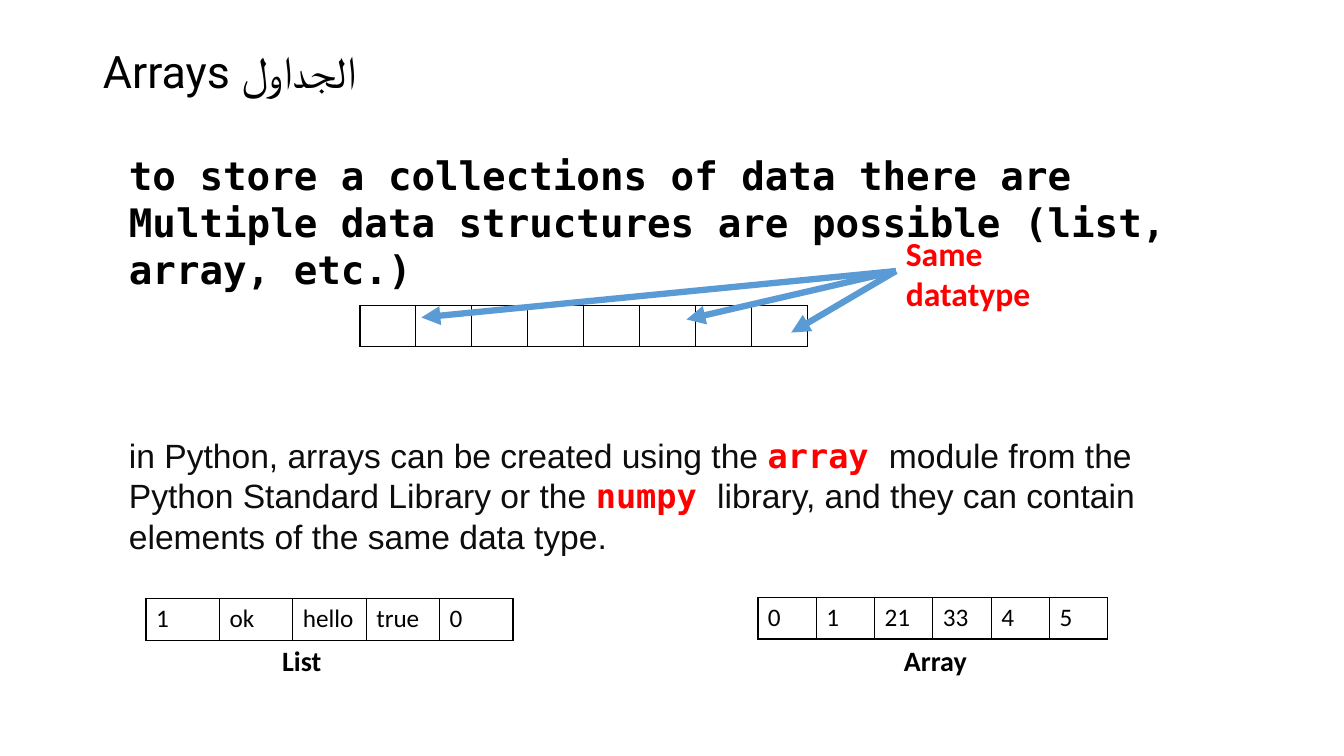
import pptx
import pptx.dml.color
import pptx.enum.shapes
import pptx.enum.text
import pptx.oxml
import pptx.oxml.ns
import pptx.util
from pptx.util import Cm

BLACK = "000000"
RED = "FF0000"
BODY_GRAY = "0D0D0D"
ARROW_BLUE = "5B9BD5"
MONO = "DejaVu Sans Mono"
ROW_HEIGHT = 1.04


def color(hex_string):
    return pptx.dml.color.RGBColor.from_string(hex_string)


def xml(content):
    return pptx.oxml.parse_xml(content.replace(">", f" {pptx.oxml.ns.nsdecls('a')}>", 1))


def set_font(font, name, size, hex_string, bold=False):
    font.name = name
    font.size = pptx.util.Pt(size)
    font.bold = bold
    font.color.rgb = color(hex_string)


def add_text_box(shapes, left, top, width, height):
    text_frame = shapes.add_textbox(Cm(left), Cm(top), Cm(width), Cm(height)).text_frame
    text_frame.word_wrap = True
    return text_frame


def add_label(shapes, text, left, top, width, height, size, hex_string):
    paragraph = add_text_box(shapes, left, top, width, height).paragraphs[0]
    paragraph.text = text
    set_font(paragraph.font, "Calibri", size, hex_string, True)


def add_title(slide, text):
    title = slide.shapes.title
    title.left, title.top, title.width, title.height = Cm(2.34), Cm(1.02), Cm(29.21), Cm(1.68)
    title.text_frame.auto_size = pptx.enum.text.MSO_AUTO_SIZE.NONE
    title.text_frame.vertical_anchor = pptx.enum.text.MSO_ANCHOR.MIDDLE
    paragraph = title.text_frame.paragraphs[0]
    paragraph.text = text
    paragraph.alignment = pptx.enum.text.PP_ALIGN.LEFT
    paragraph.line_spacing = 0.9
    set_font(paragraph.font, "Roboto", 32, BLACK)


def add_body(slide):
    text_frame = add_text_box(slide.shapes, 3, 3.68, 27.86, 9.32)
    introduction = text_frame.paragraphs[0]
    introduction.text = (
        "to store a collections of data there are Multiple data structures "
        "are possible (list, array, etc.)"
    )
    set_font(introduction.font, MONO, 28, BLACK, True)

    explanation = text_frame.add_paragraph()
    explanation.space_before = pptx.util.Pt(102)
    for text, is_module in (
        ("in Python, arrays can be created using the ", False),
        ("array ", True),
        ("module from the Python Standard Library or the ", False),
        ("numpy ", True),
        ("library, and they can contain elements of the same data type.", False),
    ):
        run = explanation.add_run()
        run.text = text
        if is_module:
            set_font(run.font, MONO, 24, RED, True)
        else:
            set_font(run.font, "Arial", 24, BODY_GRAY)


def add_borders(cell):
    properties = cell._tc.get_or_add_tcPr()
    for side in ("lnL", "lnR", "lnT", "lnB"):
        properties.append(xml(
            f'<a:{side} w="12700"><a:solidFill><a:srgbClr val="{BLACK}"/></a:solidFill></a:{side}>'
        ))


def add_cell_row(slide, values, left, top, cell_width):
    count = len(values)
    table = slide.shapes.add_table(
        1, count, Cm(left), Cm(top), Cm(cell_width * count), Cm(ROW_HEIGHT)
    ).table
    table.first_row = False
    table.horz_banding = False
    for column, cell, value in zip(table.columns, table.rows[0].cells, values):
        column.width = Cm(cell_width)
        add_borders(cell)
        cell.fill.background()
        paragraph = cell.text_frame.paragraphs[0]
        paragraph.text = value
        set_font(paragraph.font, "Calibri", 18, BLACK)


def add_arrow(shapes, start, end):
    arrow = shapes.add_connector(
        pptx.enum.shapes.MSO_CONNECTOR.STRAIGHT, *map(Cm, start), *map(Cm, end)
    )
    arrow.line.color.rgb = color(ARROW_BLUE)
    arrow.line.width = pptx.util.Pt(4.5)
    arrow.line._get_or_add_ln().append(xml('<a:tailEnd type="triangle"></a:tailEnd>'))
    arrow._element.spPr.append(xml("<a:effectLst></a:effectLst>"))


def add_datatype_callout(slide):
    shapes = slide.shapes.add_group_shape().shapes
    add_label(shapes, "Same datatype", 22.58, 5.74, 4.37, 2.31, 24, RED)
    for end in ((19.94, 8.38), (17.3, 8.05), (10.62, 8)):
        add_arrow(shapes, (22.58, 6.83), end)


def main():
    presentation = pptx.Presentation()
    presentation.slide_width = Cm(33.87)
    presentation.slide_height = Cm(19.05)
    slide = presentation.slides.add_slide(presentation.slide_layouts.get_by_name("Title Only"))

    add_body(slide)
    add_title(slide, "Arrays الجداول")
    add_cell_row(slide, [""] * 8, 9.07, 7.7, 1.41)
    add_datatype_callout(slide)
    add_cell_row(slide, ["1", "ok", "hello", "true", "0"], 3.68, 15.09, 1.85)
    add_cell_row(slide, ["0", "1", "21", "33", "4", "5"], 19.1, 15.06, 1.47)
    add_label(slide.shapes, "List", 6.86, 16.1, 4.39, 1.12, 20, BLACK)
    add_label(slide.shapes, "Array", 22.53, 16.08, 4.39, 1.12, 20, BLACK)

    presentation.save("out.pptx")


if __name__ == "__main__":
    main()
